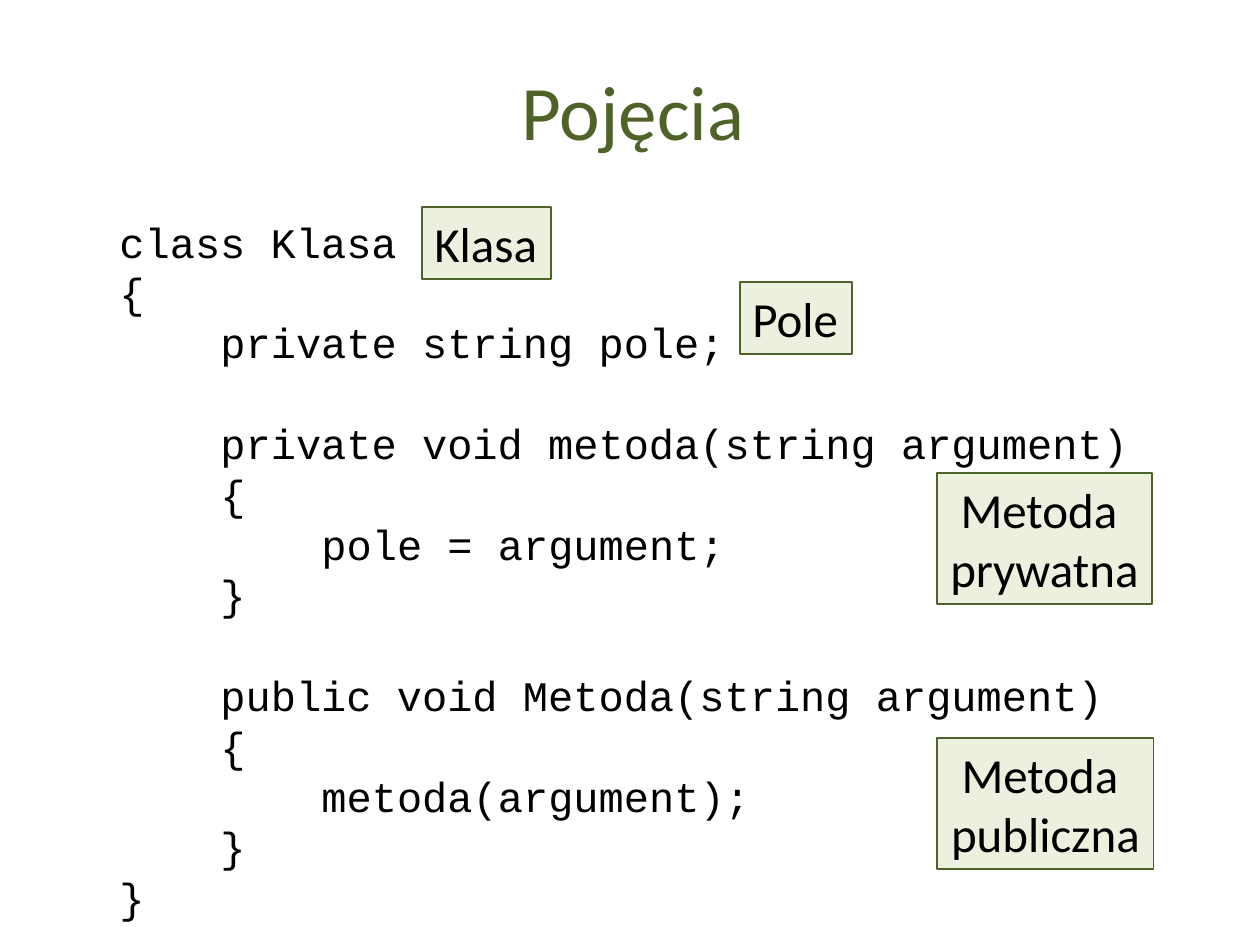
from pptx import Presentation
from pptx.dml.color import RGBColor
from pptx.enum.shapes import MSO_SHAPE
from pptx.enum.text import MSO_ANCHOR, PP_ALIGN
from pptx.util import Emu, Pt

RECTANGLE = MSO_SHAPE.RECTANGLE
MIDDLE, TOP = MSO_ANCHOR.MIDDLE, MSO_ANCHOR.TOP
LEFT, CENTER = PP_ALIGN.LEFT, PP_ALIGN.CENTER

PX = 914400 // 126
COLORS = {"green": "4F6228", "pale": "EBF1DE", "black": "000000"}
CODE_SIZE = 24
LINE_HEIGHT = 28.8
INDENT = 101

# (indent level, text, whether an empty line's gap precedes it)
CODE = [
    (0, "class Klasa", False),
    (0, "{", False),
    (1, "private string pole;", False),
    (1, "private void metoda(string argument)", True),
    (1, "{", False),
    (2, "pole = argument;", False),
    (1, "}", False),
    (1, "public void Metoda(string argument)", True),
    (1, "{", False),
    (2, "metoda(argument);", False),
    (1, "}", False),
    (0, "}", False),
]

LABELS = [
    ((422, 207, 129, 72), ["Klasa"]),
    ((740, 282, 112, 72), ["Pole"]),
    ((937, 473, 215, 131), ["Metoda ", "prywatna"]),
    ((937, 738, 217, 131), ["Metoda ", "publiczna"]),
]


def to_emu(box):
    return [Emu(length * PX) for length in box]


def color(name):
    return RGBColor.from_string(COLORS[name])


def add_lines(frame, lines, size, font, color_name, align):
    """Write each line as a paragraph and return the paragraphs."""
    for index, line in enumerate(lines):
        paragraph = frame.add_paragraph() if index else frame.paragraphs[0]
        paragraph.alignment = align
        run = paragraph.add_run()
        run.text = line
        run.font.size = Pt(size)
        run.font.name = font
        run.font.color.rgb = color(color_name)
    return frame.paragraphs


def add_title(slide, box, text):
    frame = slide.shapes.add_textbox(*to_emu(box)).text_frame
    frame.word_wrap = True
    frame.vertical_anchor = MIDDLE
    add_lines(frame, [text], 44, "Calibri", "green", CENTER)


def add_code(slide, box, code):
    frame = slide.shapes.add_textbox(*to_emu(box)).text_frame
    frame.word_wrap = True
    lines = [text for _, text, _ in code]
    paragraphs = add_lines(frame, lines, CODE_SIZE, "Courier New", "black", LEFT)
    for paragraph, (level, _, gap) in zip(paragraphs, code):
        paragraph.line_spacing = Pt(LINE_HEIGHT)
        if gap:
            paragraph.space_before = Pt(LINE_HEIGHT)
        if level:
            properties = paragraph._p.get_or_add_pPr()
            properties.set("marL", str(level * INDENT * PX))
            properties.set("indent", "0")


def add_label(slide, box, lines):
    shape = slide.shapes.add_shape(RECTANGLE, *to_emu(box))
    shape.shadow.inherit = False
    shape.fill.solid()
    shape.fill.fore_color.rgb = color("pale")
    shape.line.color.rgb = color("green")
    shape.line.width = Pt(0.75)
    frame = shape.text_frame
    frame.word_wrap = False
    frame.vertical_anchor = TOP
    align = CENTER if len(lines) > 1 else LEFT
    add_lines(frame, lines, 28, "Calibri", "black", align)


def main():
    presentation = Presentation()
    presentation.slide_width, presentation.slide_height = to_emu((1260, 945))
    slide = presentation.slides.add_slide(presentation.slide_layouts[6])
    add_title(slide, (25, 64, 1216, 91), "Pojęcia")
    add_code(slide, (107, 210, 1042, 723), CODE)
    for box, lines in LABELS:
        add_label(slide, box, lines)
    presentation.save("out.pptx")


if __name__ == "__main__":
    main()
